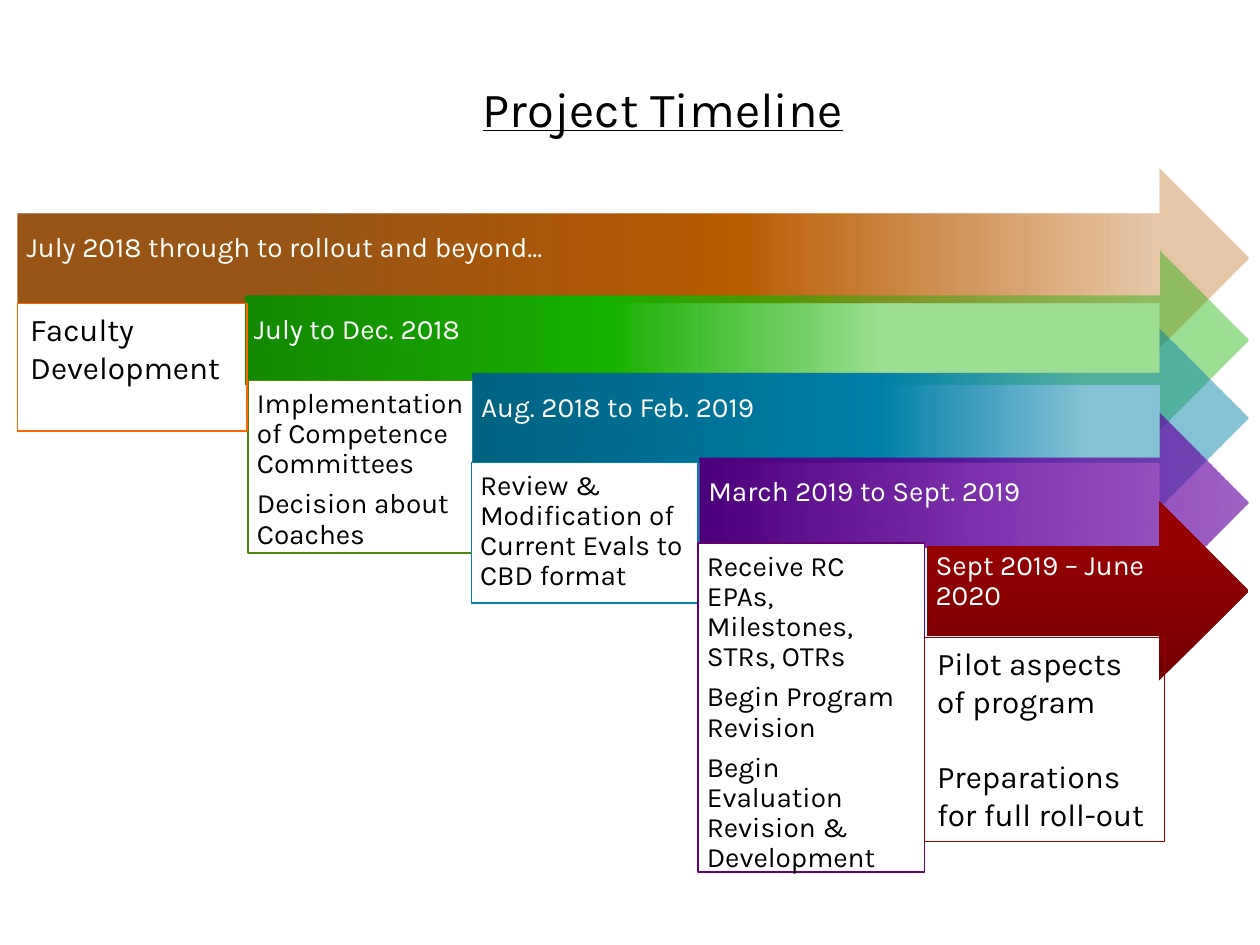
from dataclasses import dataclass

from lxml import etree
from pptx import Presentation
from pptx.dml.color import RGBColor
from pptx.enum.shapes import MSO_SHAPE
from pptx.enum.text import MSO_ANCHOR, MSO_AUTO_SIZE, PP_ALIGN
from pptx.oxml.ns import qn
from pptx.util import Cm, Pt

RECTANGLE, RIGHT_ARROW = MSO_SHAPE.RECTANGLE, MSO_SHAPE.RIGHT_ARROW
TOP, MIDDLE = MSO_ANCHOR.TOP, MSO_ANCHOR.MIDDLE
LEFT, CENTER = PP_ALIGN.LEFT, PP_ALIGN.CENTER


@dataclass(frozen=True)
class Theme:
    font: str = "Karla"
    dark: str = "000000"
    light: str = "FFFFFF"
    title_size: int = 28
    large_size: int = 18
    text_size: int = 16
    outlines: tuple = ("FF6600", "508709", "0083AE", "660075", "9C0001")
    # Each stop is position %, colour, opacity %
    gradients: tuple = (
        ((23, "8F4600", 91), (58, "BA5C00", 100), (92, "B95B00", 34)),
        ((0, "128800", 100), (36, "18B100", 100), (64, "17B100", 41)),
        ((0, "006281", 100), (52, "007FA8", 100), (79, "0080A9", 47)),
        ((0, "4C007B", 100), (62, "6300A0", 76), (100, "6300A0", 61)),
        ((0, "740001", 100), (80, "970001", 100), (100, "980001", 100)),
    )


theme = Theme()


def fill_gradient(shape, stops, angle):
    """Fill with any number of stops, each with its own opacity."""
    shape.fill.gradient()
    gradient = shape._element.spPr.find(qn("a:gradFill"))
    stop_list = gradient.find(qn("a:gsLst"))
    for old_stop in list(stop_list):
        stop_list.remove(old_stop)
    for position, color, opacity in stops:
        stop = etree.SubElement(stop_list, qn("a:gs"), pos=str(position * 1000))
        color_element = etree.SubElement(stop, qn("a:srgbClr"), val=color)
        if opacity < 100:
            etree.SubElement(color_element, qn("a:alpha"), val=str(opacity * 1000))
    gradient.find(qn("a:lin")).set("ang", str(angle * 60000))


def write_text(shape, texts, size, color, margins, anchor=TOP, align=LEFT,
               line_spacing=1.0, gap=0):
    """Write one paragraph per text; margins are left, top, right, bottom in cm."""
    frame = shape.text_frame
    frame.word_wrap = True
    frame.auto_size = MSO_AUTO_SIZE.NONE
    frame.vertical_anchor = anchor
    (frame.margin_left, frame.margin_top,
     frame.margin_right, frame.margin_bottom) = map(Cm, margins)
    for index, text in enumerate(texts):
        paragraph = frame.add_paragraph() if index else frame.paragraphs[0]
        paragraph.alignment = align
        paragraph.line_spacing = line_spacing
        paragraph.space_before = Pt(gap if index else 0)
        run = paragraph.add_run()
        run.text = text
        run.font.name = theme.font
        run.font.size = Pt(size)
        run.font.color.rgb = RGBColor.from_string(color)


presentation = Presentation()
presentation.slide_width, presentation.slide_height = Cm(25.4), Cm(19.05)
slide = presentation.slides.add_slide(presentation.slide_layouts[5])

# Title
title = slide.shapes.title
title.left, title.top, title.width, title.height = Cm(8.74), Cm(1.45), Cm(9.25), Cm(1.45)
write_text(title, ["Project Timeline"], theme.title_size, theme.dark,
           (0.25, 0.13, 0.25, 0.13), align=CENTER)
title.text_frame.paragraphs[0].runs[0].font.underline = True

# Period, arrow top, detail box (left, top, width, height), details
stages = [
    ("July 2018 through to rollout and beyond...", 3.4,
     (0.36, 6.12, 4.62, 2.57), ["Faculty Development"]),
    ("July to Dec. 2018", 5.05, (5, 7.67, 4.57, 3.48),
     ["Implementation of Competence Committees", "Decision about Coaches"]),
    ("Aug. 2018 to Feb. 2019", 6.63, (9.5, 9.32, 4.57, 2.84),
     ["Review & Modification of Current Evals to CBD format"]),
    ("March 2019 to Sept. 2019", 8.33, (14.07, 10.95, 4.57, 6.63),
     ["Receive RC EPAs, Milestones, STRs, OTRs", "Begin Program Revision",
      "Begin Evaluation Revision & Development"]),
    ("Sept 2019 – June 2020", 10.11, (18.64, 12.85, 4.83, 4.11),
     ["Pilot aspects of program", "Preparations for full roll-out"]),
]
first_left, left_step = 0.36, 4.58
arrow_tip, arrow_height = 25.17, 3.61
last = len(stages) - 1

# The first and last boxes are see-through and lie above everything else
layers = []
for index in range(len(stages)):
    layers.append(("arrow", index))
    if 0 < index < last:
        layers.append(("box", index))
layers += [("box", 0), ("box", last)]

for part, index in layers:
    period, arrow_top, box, details = stages[index]
    if part == "arrow":
        left = first_left + index * left_step
        arrow = slide.shapes.add_shape(RIGHT_ARROW, Cm(left), Cm(arrow_top),
                                       Cm(arrow_tip - left), Cm(arrow_height))
        arrow.shadow.inherit = False
        arrow.line.fill.background()
        fill_gradient(arrow, theme.gradients[index], 270 if index == last else 0)
        write_text(arrow, [period], theme.text_size, theme.light,
                   (0.18, 0.18, 0.71, 0.58), anchor=MIDDLE, line_spacing=0.9)
        # Room below the label lifts it above the middle of the shaft
        arrow.text_frame.paragraphs[0].space_after = Pt(5.6)
        continue
    detail_box = slide.shapes.add_shape(RECTANGLE, *map(Cm, box))
    detail_box.shadow.inherit = False
    detail_box.line.color.rgb = RGBColor.from_string(theme.outlines[index])
    detail_box.line.width = Pt(0.75)
    if index in (0, last):
        detail_box.fill.background()
        write_text(detail_box, details, theme.large_size, theme.dark,
                   (0.25, 0.13, 0.25, 0.13), gap=21.7)
    else:
        detail_box.fill.solid()
        detail_box.fill.fore_color.rgb = RGBColor.from_string(theme.light)
        write_text(detail_box, details, theme.text_size, theme.dark,
                   (0.18, 0.18, 0.18, 0.18), line_spacing=0.9, gap=5.6)

presentation.save("out.pptx")
